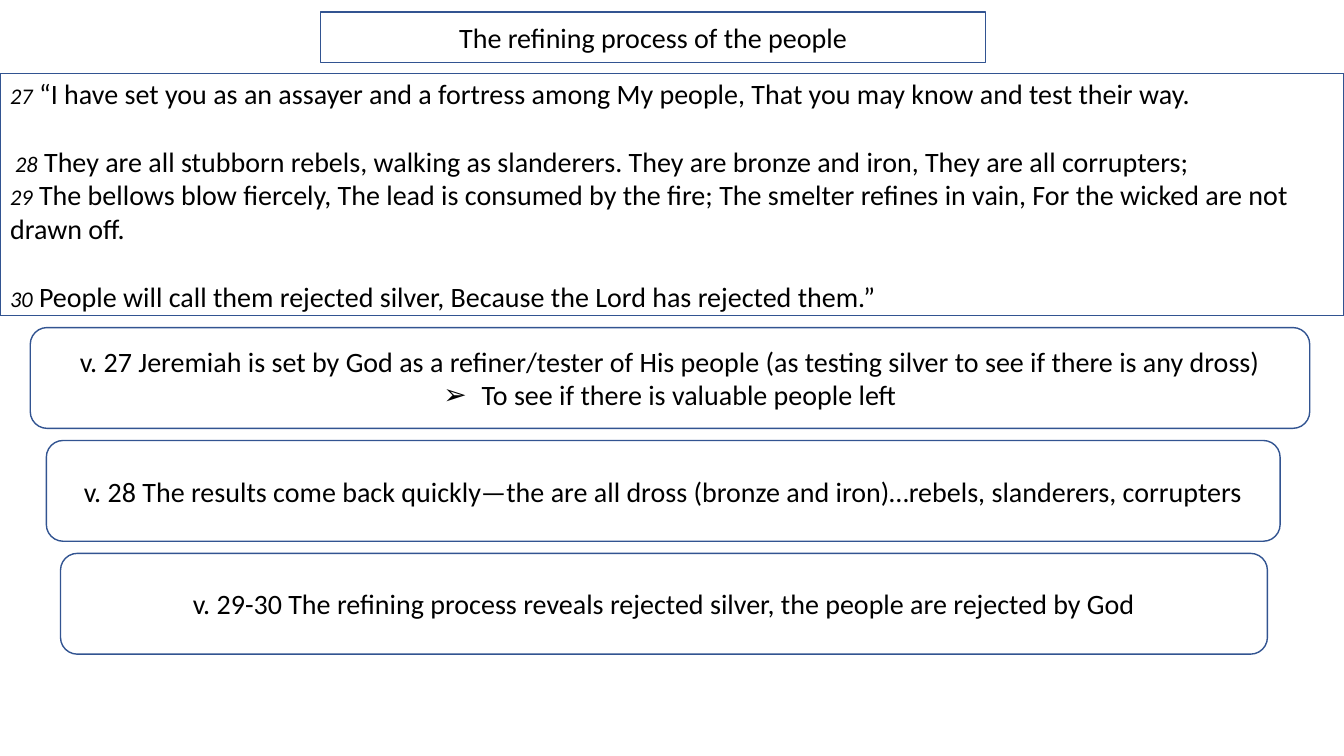
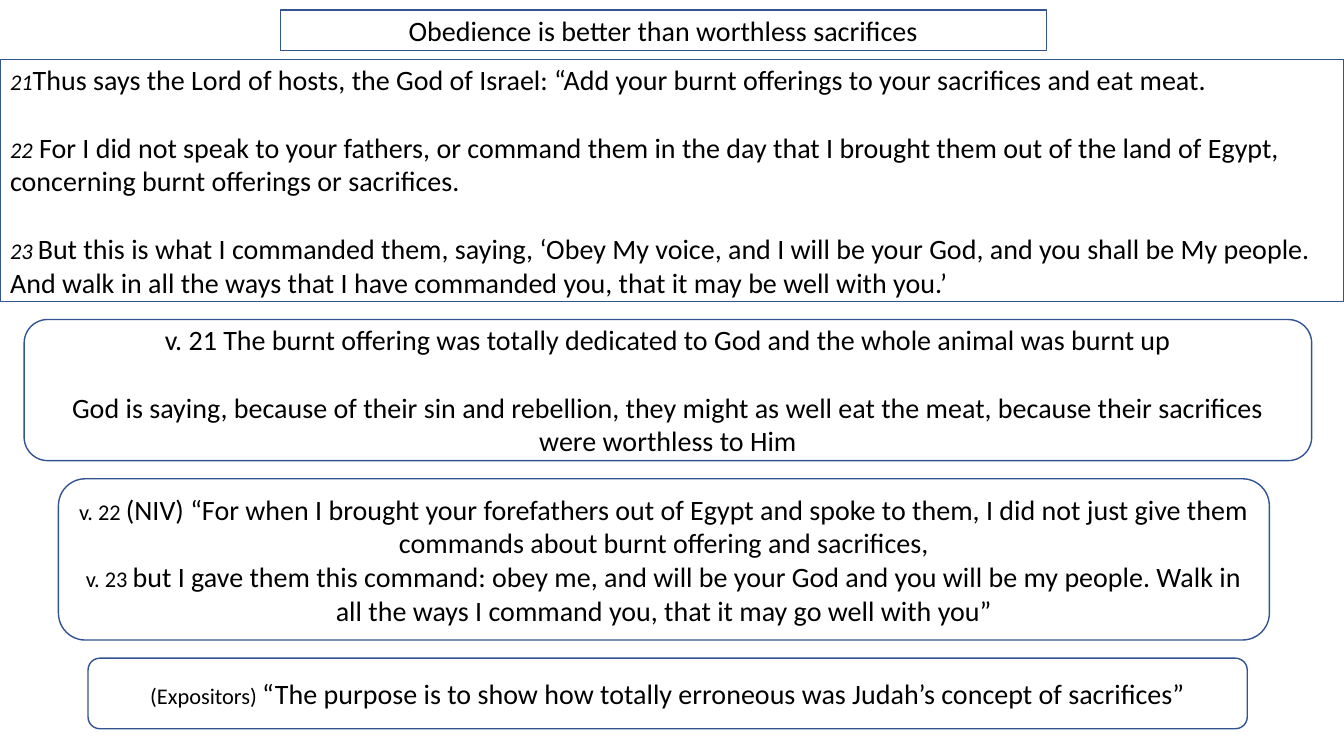
import dataclasses

import pptx
import pptx.dml.color
import pptx.enum.shapes
import pptx.enum.text
import pptx.oxml
import pptx.oxml.ns
import pptx.util
from lxml import etree

COLORS = {"fill": "FFFFFF", "outline": "325491", "text": "000000"}
FONT = "Calibri"
TEXT_SIZE, LABEL_SIZE = 20, 16
BLANK_LINE = 24.4
WIDTH, HEIGHT = pptx.util.Inches(13.33), pptx.util.Inches(7.5)
COLUMN, ROW = WIDTH / 100, HEIGHT / 75
PASSAGE_ROWS = 24
ALIGN = pptx.enum.text.PP_ALIGN


@dataclasses.dataclass
class Line:
    text: str
    label: str = ""
    gap: bool = False
    bullet: str = ""


@dataclasses.dataclass
class Box:
    """Left and width in columns, height in rows."""
    left: float
    width: float
    height: float
    lines: list


def rgb(name):
    return pptx.dml.color.RGBColor.from_string(COLORS[name])


def place(shape, left, top, width, height):
    shape.left, shape.width = round(left * COLUMN), round(width * COLUMN)
    shape.top, shape.height = round(top * ROW), round(height * ROW)


def set_rounded_outline(placeholder):
    geometry = etree.SubElement(
        placeholder.element.spPr, pptx.oxml.ns.qn("a:prstGeom"), prst="roundRect")
    etree.SubElement(geometry, pptx.oxml.ns.qn("a:avLst"))


def style_panel(shape):
    shape.shadow.inherit = False
    shape.fill.solid()
    shape.fill.fore_color.rgb = rgb("fill")
    shape.line.color.rgb = rgb("outline")
    shape.line.width = pptx.util.Pt(1)


def set_bullet(paragraph, character):
    """Give the paragraph a hanging bullet, or none when character is empty."""
    properties = paragraph._p.get_or_add_pPr()
    indent = pptx.util.Inches(0.38) if character else 0
    properties.set("marL", str(indent))
    properties.set("indent", str(-indent))
    if character:
        etree.SubElement(properties, pptx.oxml.ns.qn("a:buFont"), typeface="Arial")
        etree.SubElement(properties, pptx.oxml.ns.qn("a:buChar"), char=character)
    else:
        etree.SubElement(properties, pptx.oxml.ns.qn("a:buNone"))


def add_run(paragraph, text, size, italic=False):
    run = paragraph.add_run()
    run.text = text
    run.font.name = FONT
    run.font.size = pptx.util.Pt(size)
    run.font.italic = italic
    run.font.color.rgb = rgb("text")


def write_lines(shape, lines, alignment, italic_labels=False):
    frame = shape.text_frame
    frame.word_wrap = True
    frame.auto_size = pptx.enum.text.MSO_AUTO_SIZE.NONE
    frame.vertical_anchor = pptx.enum.text.MSO_ANCHOR.MIDDLE
    for index, line in enumerate(lines):
        paragraph = frame.add_paragraph() if index else frame.paragraphs[0]
        set_bullet(paragraph, line.bullet)
        paragraph.alignment = alignment
        paragraph.space_before = pptx.util.Pt(BLANK_LINE if line.gap else 0)
        if line.label:
            add_run(paragraph, line.label, LABEL_SIZE, italic_labels)
        add_run(paragraph, line.text, TEXT_SIZE)


def fill_title(slide, top, box):
    title = slide.shapes.title
    place(title, box.left, top, box.width, box.height)
    set_rounded_outline(title)
    style_panel(title)
    write_lines(title, box.lines, ALIGN.CENTER)


def fill_passage(slide, top, verses):
    passage = slide.placeholders[1]
    place(passage, 0, top, 100, PASSAGE_ROWS)
    style_panel(passage)
    write_lines(passage, verses, ALIGN.LEFT, italic_labels=True)


def add_comment_box(slide, top, box):
    shape = slide.shapes.add_shape(
        pptx.enum.shapes.MSO_SHAPE.ROUNDED_RECTANGLE, 0, 0, 0, 0)
    place(shape, box.left, top, box.width, box.height)
    style_panel(shape)
    write_lines(shape, box.lines, ALIGN.CENTER)


def add_study_slide(presentation, top, title_gap, gap, title, verses, comments):
    """Stack title, passage and comments downwards; top and gaps are in rows."""
    slide = presentation.slides.add_slide(presentation.slide_layouts[1])
    fill_title(slide, top, title)
    top += title.height + title_gap
    fill_passage(slide, top, verses)
    top += PASSAGE_ROWS + gap
    for box in comments:
        add_comment_box(slide, top, box)
        top += box.height + gap


def main():
    presentation = pptx.Presentation()
    presentation.slide_width, presentation.slide_height = WIDTH, HEIGHT

    add_study_slide(
        presentation, top=1.2, title_gap=1.1, gap=1.2,
        title=Box(23.85, 49.5, 5, [Line("The refining process of the people")]),
        verses=[
            Line(" “I have set you as an assayer and a fortress among My people, "
                 "That you may know and test their way.", "27"),
            Line(" They are all stubborn rebels, walking as slanderers. "
                 "They are bronze and iron, They are all corrupters;", " 28", gap=True),
            Line(" The bellows blow fiercely, The lead is consumed by the fire; "
                 "The smelter refines in vain, For the wicked are not drawn off.", "29"),
            Line(" People will call them rejected silver, "
                 "Because the Lord has rejected them.”", "30", gap=True),
        ],
        comments=[
            Box(2.25, 95.2, 10, [
                Line("v. 27 Jeremiah is set by God as a refiner/tester of His people "
                     "(as testing silver to see if there is any dross)"),
                Line("To see if there is valuable people left", bullet="➢")]),
            Box(3.45, 91.8, 10, [
                Line("v. 28 The results come back quickly—the are all dross "
                     "(bronze and iron)…rebels, slanderers, corrupters")]),
            Box(4.5, 89.8, 10, [
                Line("v. 29-30 The refining process reveals rejected silver, "
                     "the people are rejected by God")]),
        ])

    add_study_slide(
        presentation, top=1, title_gap=0.9, gap=1.8,
        title=Box(20.85, 57, 4, [Line("Obedience is better than worthless sacrifices")]),
        verses=[
            Line("Thus says the Lord of hosts, the God of Israel: “Add your burnt "
                 "offerings to your sacrifices and eat meat.", "21"),
            Line(" For I did not speak to your fathers, or command them in the day "
                 "that I brought them out of the land of Egypt, concerning burnt "
                 "offerings or sacrifices.", "22", gap=True),
            Line("But this is what I commanded them, saying, ‘Obey My voice, and I "
                 "will be your God, and you shall be My people. And walk in all the "
                 "ways that I have commanded you, that it may be well with you.’",
                 "23 ", gap=True),
        ],
        comments=[
            Box(1.8, 95.8, 14, [
                Line("v. 21 The burnt offering was totally dedicated to God and the "
                     "whole animal was burnt up"),
                Line("God is saying, because of their sin and rebellion, they might as "
                     "well eat the meat, because their sacrifices were worthless to Him",
                     gap=True)]),
            Box(4.35, 90.1, 16, [
                Line("(NIV) “For when I brought your forefathers out of Egypt and spoke "
                     "to them, I did not just give them commands about burnt offering "
                     "and sacrifices,", "v. 22 "),
                Line("but I gave them this command: obey me, and will be your God and "
                     "you will be my people. Walk in all the ways I command you, that "
                     "it may go well with you”", "v. 23 ")]),
            Box(6.55, 86.25, 7, [
                Line("“The purpose is to show how totally erroneous was Judah’s concept "
                     "of sacrifices”", "(Expositors) ")]),
        ])

    presentation.save("out.pptx")


if __name__ == "__main__":
    main()
